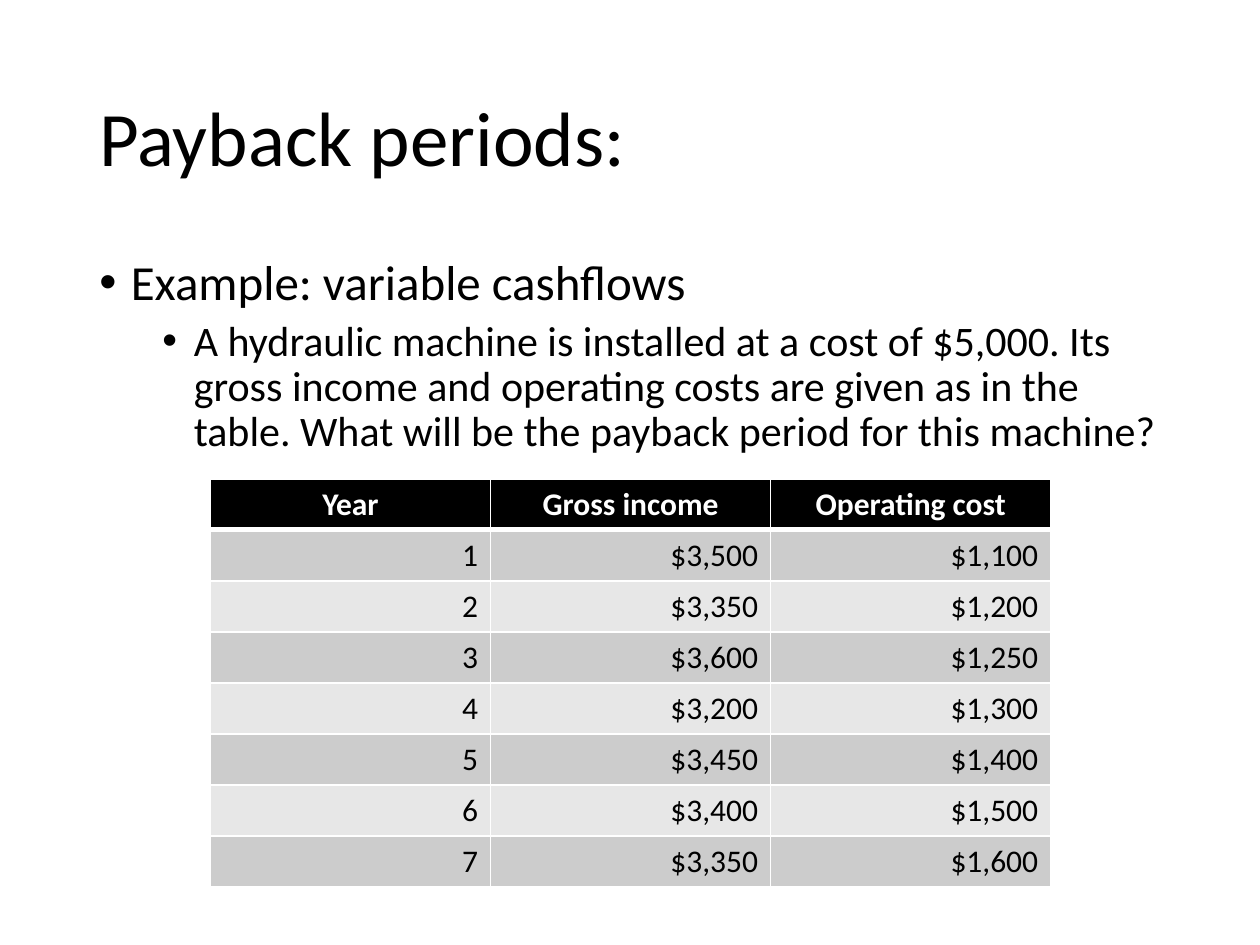
from lxml.etree import SubElement
from pptx import Presentation
from pptx.dml.color import RGBColor
from pptx.enum.text import MSO_ANCHOR, PP_ALIGN
from pptx.oxml.ns import qn
from pptx.util import Inches, Pt

BLACK = RGBColor(0x00, 0x00, 0x00)
WHITE = RGBColor(0xFF, 0xFF, 0xFF)
DARK_BAND = RGBColor(0xCC, 0xCC, 0xCC)
LIGHT_BAND = RGBColor(0xE7, 0xE7, 0xE7)
FONT = "Calibri"

HEADERS = ["Year", "Gross income", "Operating cost"]
CASHFLOWS = [
    (3500, 1100), (3350, 1200), (3600, 1250), (3200, 1300),
    (3450, 1400), (3400, 1500), (3350, 1600),
]


def write(p, text, size, color=BLACK, bold=False, align=PP_ALIGN.LEFT,
          line_spacing=None, before=None):
    p.alignment = align
    if line_spacing is not None:
        p.line_spacing = line_spacing
    if before is not None:
        p.space_before = Pt(before)
    r = p.add_run()
    r.text = text
    r.font.name, r.font.size = FONT, Pt(size)
    r.font.bold, r.font.color.rgb = bold, color


def add_bullet(p, left):
    """Hang a round bullet a quarter inch before the text at left."""
    pPr = p._p.get_or_add_pPr()
    pPr.set("marL", str(Inches(left)))
    pPr.set("indent", str(Inches(-0.25)))
    SubElement(pPr, qn("a:buFont"), typeface="Arial")
    SubElement(pPr, qn("a:buChar"), char="•")


def add_text_frame(slide, box, anchor):
    tf = slide.shapes.add_textbox(*map(Inches, box)).text_frame
    tf.word_wrap = True
    tf.vertical_anchor = anchor
    return tf


def add_title(slide, box):
    tf = add_text_frame(slide, box, MSO_ANCHOR.MIDDLE)
    write(tf.paragraphs[0], "Payback periods:", 44, line_spacing=0.9)


def add_body(slide, box):
    tf = add_text_frame(slide, box, MSO_ANCHOR.TOP)
    p = tf.paragraphs[0]
    write(p, "Example: variable cashflows", 28, line_spacing=0.9, before=10)
    add_bullet(p, 0.25)
    p = tf.add_paragraph()
    p.level = 1
    write(p, "A hydraulic machine is installed at a cost of $5,000. Its gross "
             "income and operating costs are given as in the table. What will "
             "be the payback period for this machine?",
          24, line_spacing=0.9, before=5)
    add_bullet(p, 0.75)


def set_borders(cell, top=1, bottom=1):
    tcPr = cell._tc.get_or_add_tcPr()
    for side, width in (("L", 1), ("R", 1), ("T", top), ("B", bottom)):
        ln = SubElement(tcPr, qn(f"a:ln{side}"), w=str(Pt(width)))
        fill = SubElement(ln, qn("a:solidFill"))
        SubElement(fill, qn("a:srgbClr"), val=str(WHITE))


def add_cashflow_table(slide, box):
    rows = [HEADERS] + [
        (str(year), f"${income:,}", f"${cost:,}")
        for year, (income, cost) in enumerate(CASHFLOWS, 1)
    ]
    table = slide.shapes.add_table(
        len(rows), len(HEADERS), *map(Inches, box)).table
    for i, row in enumerate(rows):
        header = i == 0
        for j, text in enumerate(row):
            cell = table.cell(i, j)
            # Borders come before the fill in the cell properties.
            set_borders(cell, top=3 if i == 1 else 1, bottom=3 if header else 1)
            cell.fill.solid()
            cell.fill.fore_color.rgb = (
                BLACK if header else DARK_BAND if i % 2 else LIGHT_BAND)
            write(cell.text_frame.paragraphs[0], text, 18,
                  color=WHITE if header else BLACK, bold=header,
                  align=PP_ALIGN.CENTER if header else PP_ALIGN.RIGHT)


def main():
    prs = Presentation()
    prs.slide_width, prs.slide_height = Inches(10), Inches(7.5)
    slide = prs.slides.add_slide(prs.slide_layouts[6])
    add_title(slide, (0.69, 0.4, 8.62, 1.45))
    add_body(slide, (0.69, 2, 8.62, 4.76))
    add_cashflow_table(slide, (1.67, 3.8, 6.67, 3.24))
    prs.save("out.pptx")


if __name__ == "__main__":
    main()
